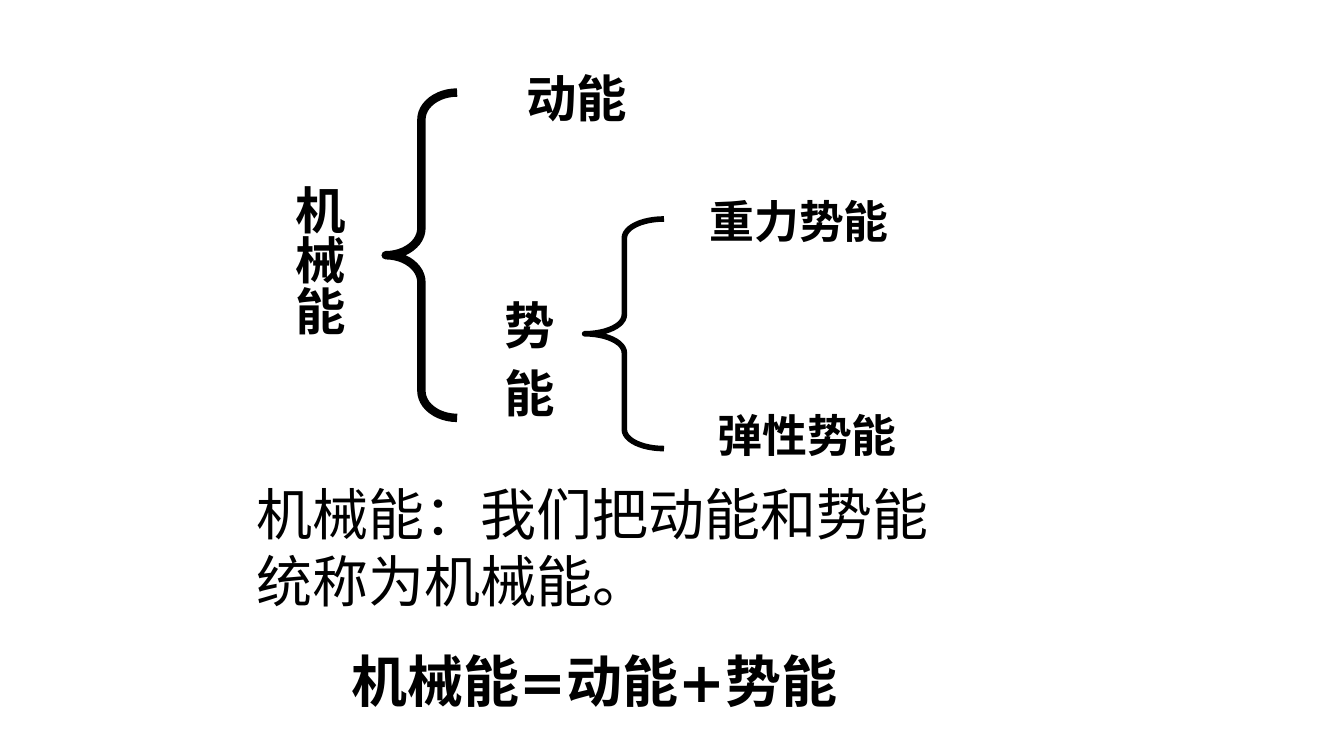
import pptx
import pptx.dml.color
import pptx.enum.shapes
import pptx.enum.text
import pptx.oxml
import pptx.oxml.ns
import pptx.util

Cm = pptx.util.Cm
FONT = "DejaVu Sans"
BLACK = "000000"


def color(value):
    return pptx.dml.color.RGBColor.from_string(value)


def set_attrs(obj, values):
    for name, value in values.items():
        setattr(obj, name, value)


def place(box, x, y, w, h):
    return Cm(box[0] + x), Cm(box[1] + y), Cm(w), Cm(h)


def add_text(s, pos, text, size, bold=True, vertical=False):
    sp = s.shapes.add_textbox(*pos)
    tf = sp.text_frame
    set_attrs(tf, {"word_wrap": True,
                   "auto_size": pptx.enum.text.MSO_AUTO_SIZE.SHAPE_TO_FIT_TEXT})
    if vertical:
        tf._txBody.bodyPr.set("vert", "eaVert")
    r = tf.paragraphs[0].add_run()
    r.text = text
    set_attrs(r.font, {"size": pptx.util.Pt(size), "name": FONT, "bold": bold})
    r.font.color.rgb = color(BLACK)
    ea = pptx.oxml.parse_xml(
        f'<a:ea {pptx.oxml.ns.nsdecls("a")} typeface="{FONT}"/>')
    r.font._element.find(pptx.oxml.ns.qn("a:latin")).addnext(ea)


def add_brace(s, pos, curve, width):
    sp = s.shapes.add_shape(pptx.enum.shapes.MSO_SHAPE.LEFT_BRACE, *pos)
    sp.shadow.inherit = False
    sp.adjustments[0] = curve
    sp.fill.background()
    sp.line.color.rgb = color(BLACK)
    sp.line.width = pptx.util.Pt(width)


def energy_tree(s, box):
    labels = [
        ("机械能", 27, True, (0, 2.11, 1.65, 5.26)),
        ("动能", 27, False, (4.62, 0, 3.23, 1.4)),
        ("势 能", 27, True, (3.89, 4.04, 1.65, 4.95)),
        ("重力势能", 24, False, (8.08, 2.39, 4.65, 1.27)),
        ("弹性势能", 24, False, (8.23, 6.45, 5.41, 1.27)),
    ]
    for text, size, vertical, area in labels:
        add_text(s, place(box, *area), text, size, vertical=vertical)
    add_brace(s, place(box, 2.21, 0.61, 1.35, 6.15), 0.38, 4.5)
    add_brace(s, place(box, 5.97, 3, 1.5, 4.34), 0.24, 3)


def definition(s, box):
    add_text(s, place(box, 0, 0, 13.36, 2.79),
             "机械能：我们把动能和势能统称为机械能。", 30, bold=False)
    add_text(s, place(box, 1.8, 3.15, 10.95, 1.52), "机械能=动能+势能", 30)


def main():
    prs = pptx.Presentation()
    set_attrs(prs, {"slide_width": Cm(25.4), "slide_height": Cm(14.29)})
    s = prs.slides.add_slide(prs.slide_layouts[6])
    energy_tree(s, (5.08, 1.14))
    definition(s, (4.6, 8.94))
    prs.save("out.pptx")


if __name__ == "__main__":
    main()
